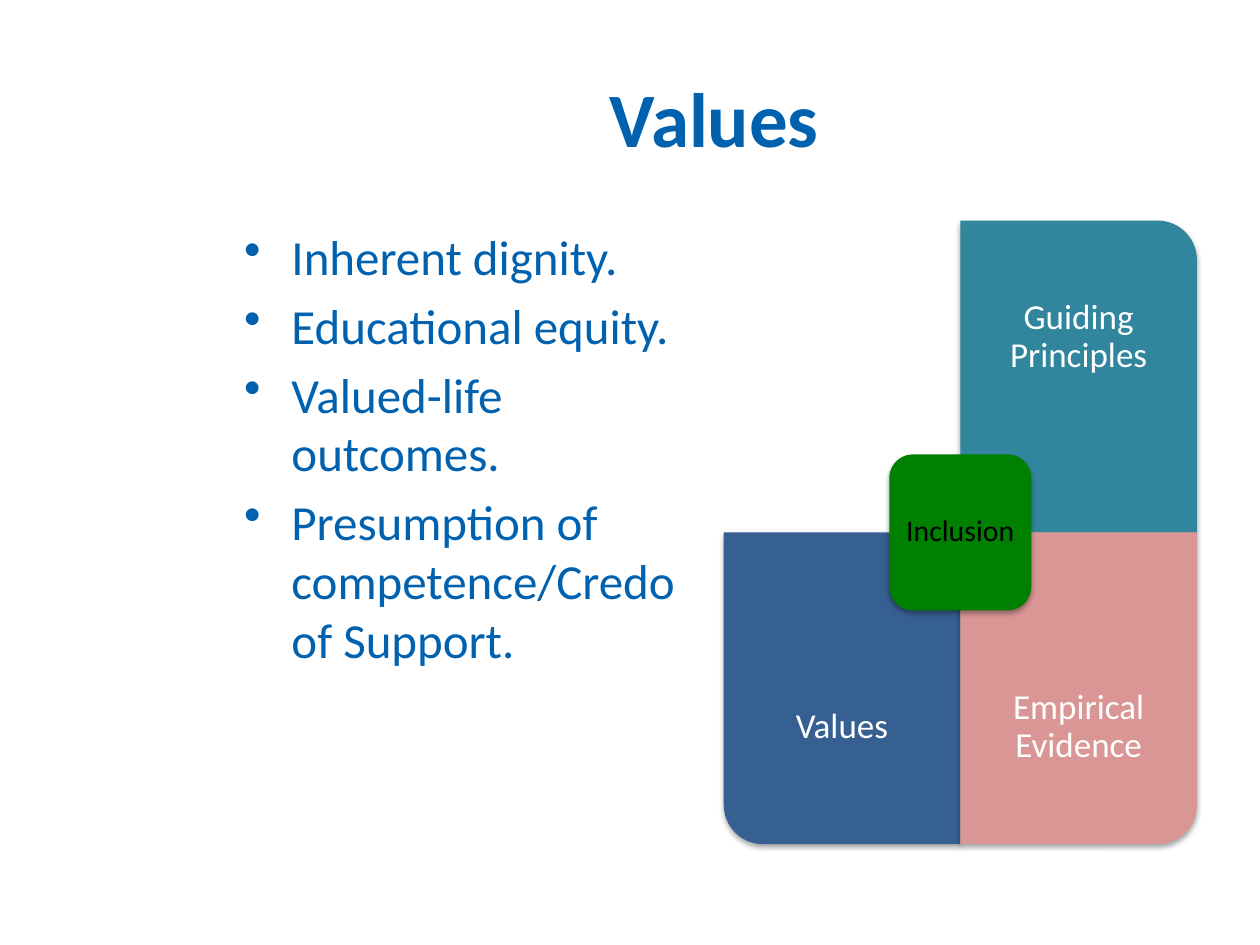
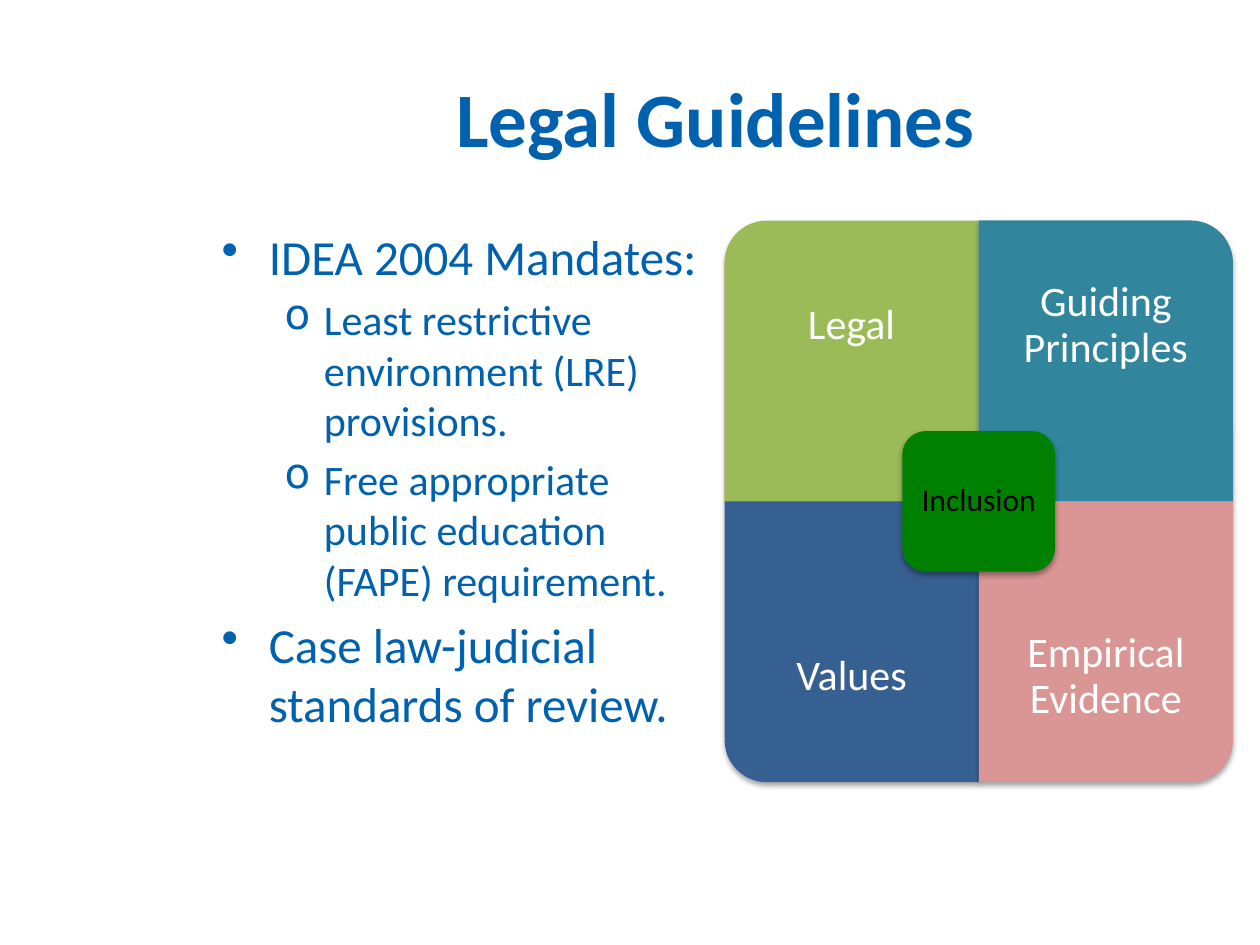
from dataclasses import dataclass

import pptx
import pptx.dml.color
import pptx.enum.shapes
import pptx.enum.text
import pptx.oxml
import pptx.oxml.ns
import pptx.util

Pt = pptx.util.Pt
RGB = pptx.dml.color.RGBColor.from_string
SHAPE = pptx.enum.shapes.MSO_SHAPE
ANCHOR = pptx.enum.text.MSO_ANCHOR
CENTER = pptx.enum.text.PP_ALIGN.CENTER


@dataclass(frozen=True)
class Theme:
    font: str = "Calibri"
    text: str = "0061AF"
    white: str = "FFFFFF"
    black: str = "000000"
    hub: str = "008000"
    title_size: int = 44
    body_sizes: tuple = (28, 24)


THEME = Theme()
TOP, RIGHT = 126, 684

# Indent and hanging width of each list level, with its bullet
LEVELS = ((27, 27, "•"), (58.5, 22.5, "o"))

# Quarter name: column, row, rotation that turns the round corner outwards, fill
QUARTERS = {
    "Legal": (0, 0, 270, "9BBB59"),
    "Guiding Principles": (1, 0, 0, "31859C"),
    "Values": (0, 1, 180, "376092"),
    "Empirical Evidence": (1, 1, 90, "D99694"),
}


def add_run(p, text, size, color, bold=False):
    r = p.add_run()
    r.text = text
    r.font.name = THEME.font
    r.font.size = Pt(size)
    r.font.bold = bold
    r.font.color.rgb = RGB(color)


def add_text_frame(shapes, left, top, width, height, anchor=ANCHOR.TOP):
    tf = shapes.add_textbox(Pt(left), Pt(top), Pt(width), Pt(height)).text_frame
    tf.word_wrap = True
    tf.vertical_anchor = anchor
    return tf


def add_title(s, text, left):
    tf = add_text_frame(s.shapes, left, 21.6, RIGHT - left, 90, ANCHOR.MIDDLE)
    p = tf.paragraphs[0]
    p.alignment = CENTER
    add_run(p, text, THEME.title_size, THEME.text, bold=True)


def set_bullet(p, level):
    indent, hanging, char = LEVELS[level]
    pPr = p._p.get_or_add_pPr()
    pPr.set("marL", str(Pt(indent)))
    pPr.set("indent", str(-Pt(hanging)))
    bullet = pptx.oxml.parse_xml(
        f'<a:buChar {pptx.oxml.ns.nsdecls("a")} char="{char}"/>')
    pPr.append(bullet)


def add_bullets(s, items, left, width):
    tf = add_text_frame(s.shapes, left, TOP, width, 356.4)
    for i, (level, text) in enumerate(items):
        p = tf.add_paragraph() if i else tf.paragraphs[0]
        p.level = level
        set_bullet(p, level)
        size = THEME.body_sizes[level]
        if i:
            p.space_before = Pt(0.2 * size)
        add_run(p, text, size, THEME.text)


def add_tile(shapes, kind, left, top, width, height, fill, rotation=0):
    """Add a tile whose outline after rotation fills the given box."""
    w, h = (height, width) if rotation % 180 else (width, height)
    sp = shapes.add_shape(kind, Pt(left + (width - w) / 2),
                          Pt(top + (height - h) / 2), Pt(w), Pt(h))
    sp.rotation = rotation
    sp.fill.solid()
    sp.fill.fore_color.rgb = RGB(fill)
    sp.line.fill.background()
    sp.shadow.inherit = False
    effects = sp._element.spPr.find(pptx.oxml.ns.qn("a:effectLst"))
    effects.append(pptx.oxml.parse_xml(
        f'<a:outerShdw {pptx.oxml.ns.nsdecls("a")} blurRad="{Pt(3.1)}" '
        f'dist="{Pt(1.8)}" dir="5400000" rotWithShape="0">'
        f'<a:srgbClr val="{THEME.black}"><a:alpha val="35000"/></a:srgbClr>'
        '</a:outerShdw>'))


def add_label(shapes, text, left, top, width, height, size, color, inset):
    tf = add_text_frame(shapes, left, top, width, height, ANCHOR.MIDDLE)
    tf.margin_left = tf.margin_right = Pt(inset)
    tf.margin_top = tf.margin_bottom = Pt(inset)
    p = tf.paragraphs[0]
    p.alignment = CENTER
    p.line_spacing = 0.9
    add_run(p, text, size, color)


def add_matrix(s, names, left, cell_w, cell_h, label_size, hub_size):
    """Add the named quarters around the Inclusion hub."""
    shapes = s.shapes.add_group_shape().shapes
    label_h = 0.75 * cell_h
    for name in names:
        col, row, rotation, fill = QUARTERS[name]
        x, y = left + col * cell_w, TOP + row * cell_h
        add_tile(shapes, SHAPE.ROUND_1_RECTANGLE, x, y, cell_w, cell_h,
                 fill, rotation)
        add_label(shapes, name, x, y + row * (cell_h - label_h), cell_w,
                  label_h, label_size, THEME.white, 0.56 * label_size)

    hub_w, hub_h = 0.6 * cell_w, 0.5 * cell_h
    x, y = left + cell_w - hub_w / 2, TOP + cell_h - hub_h / 2
    pad = 0.05 * min(hub_w, hub_h)
    add_tile(shapes, SHAPE.ROUNDED_RECTANGLE, x, y, hub_w, hub_h, THEME.hub)
    add_label(shapes, "Inclusion", x + pad, y + pad, hub_w - 2 * pad,
              hub_h - 2 * pad, hub_size, THEME.black, 0.28 * hub_size)


def add_values_slide(s):
    add_title(s, "Values", 132.5)
    add_bullets(s, [
        (0, "Inherent dignity."),
        (0, "Educational equity."),
        (0, "Valued-life outcomes."),
        (0, "Presumption of competence/Credo of Support."),
    ], 132.5, 270.7)
    add_matrix(s, ["Guiding Principles", "Values", "Empirical Evidence"],
               413.5, 135.25, 178.2, 20, 17)


def add_legal_slide(s):
    add_title(s, "Legal Guidelines", 134)
    add_bullets(s, [
        (0, "IDEA 2004 Mandates:"),
        (1, "Least restrictive environment (LRE) provisions."),
        (1, "Free appropriate public education (FAPE) requirement."),
        (0, "Case law-judicial standards of review."),
    ], 119.5, 294.5)
    add_matrix(s, QUARTERS, 414, 145.3, 160.5, 24, 18)


def main():
    prs = pptx.Presentation()
    prs.slide_width, prs.slide_height = Pt(720), Pt(540)
    for build in (add_values_slide, add_legal_slide):
        build(prs.slides.add_slide(prs.slide_layouts[6]))
    prs.save("out.pptx")


if __name__ == "__main__":
    main()
